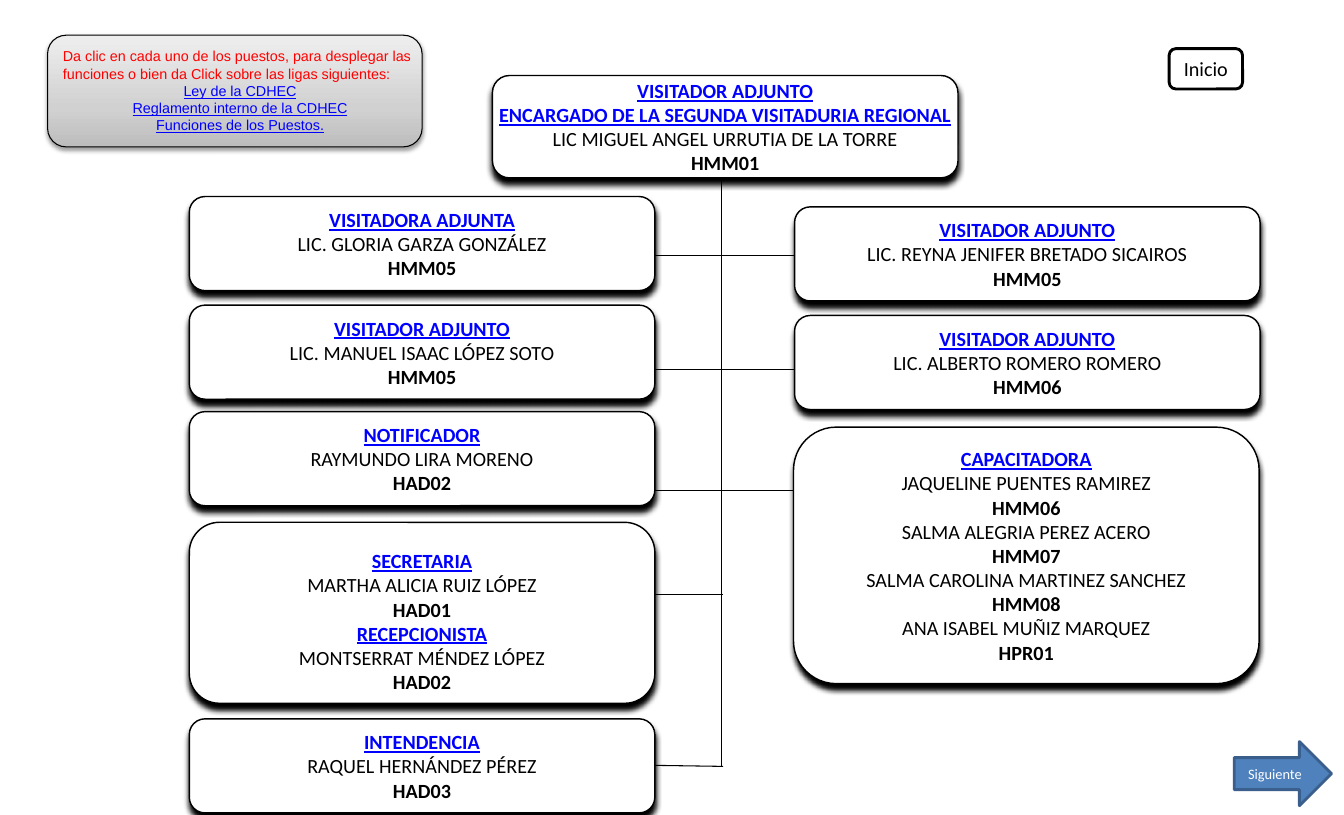
from lxml.etree import SubElement
from pptx import Presentation
from pptx.dml.color import RGBColor
from pptx.enum.shapes import MSO_CONNECTOR as CONNECTOR, MSO_SHAPE as SHAPE
from pptx.enum.text import MSO_ANCHOR as ANCHOR, PP_ALIGN as ALIGN
from pptx.oxml.ns import qn
from pptx.util import Pt

PX = 9144  # EMU; 100 px to the inch
COLORS = {
    "black": "000000", "white": "FFFFFF", "role": "0000FF", "notice": "FF0000",
    "arrow": "4F81BD", "arrow_edge": "3A5F8C",
    "gray_dark": "BDBDBD", "gray_mid": "D1D1D1", "gray_light": "EEEEEE",
}
STYLES = {
    "role": {"size": Pt(14), "bold": True, "underline": True},
    "person": {"size": Pt(14)},
    "code": {"size": Pt(14), "bold": True},
    "notice": {"size": Pt(10), "name": "Arial"},
    "law": {"size": Pt(10), "name": "Arial", "underline": True},
    "next": {"size": Pt(10)},
}
STYLE_COLORS = {"role": "role", "law": "role", "notice": "notice", "next": "white"}

CARD_W, CARD_H = 450, 91
LEFT_X, RIGHT_X, TRUNK_X = 183, 768, 697
HEAD = ((476, 73, CARD_W, 99), [
    (["VISITADOR ADJUNTO", "ENCARGADO DE LA SEGUNDA VISITADURIA REGIONAL"],
     [("LIC MIGUEL ANGEL URRUTIA DE LA TORRE", "HMM01")])])
SINGLE_POSTS = [
    (LEFT_X, 190, "VISITADORA ADJUNTA", "LIC. GLORIA GARZA GONZÁLEZ", "HMM05"),
    (LEFT_X, 295, "VISITADOR ADJUNTO", "LIC. MANUEL ISAAC LÓPEZ SOTO", "HMM05"),
    (LEFT_X, 398, "NOTIFICADOR", "RAYMUNDO LIRA MORENO", "HAD02"),
    (LEFT_X, 695, "INTENDENCIA", "RAQUEL HERNÁNDEZ PÉREZ", "HAD03"),
    (RIGHT_X, 200, "VISITADOR ADJUNTO", "LIC. REYNA JENIFER BRETADO SICAIROS", "HMM05"),
    (RIGHT_X, 305, "VISITADOR ADJUNTO", "LIC. ALBERTO ROMERO ROMERO", "HMM06"),
]
OFFICE = ((LEFT_X, 505, CARD_W, 175), [
    (["SECRETARIA"], [("MARTHA ALICIA RUIZ LÓPEZ", "HAD01")]),
    (["RECEPCIONISTA"], [("MONTSERRAT MÉNDEZ LÓPEZ", "HAD02")])])
TRAINERS = ((RIGHT_X - 1, 413, CARD_W, 248), [
    (["CAPACITADORA"], [
        ("JAQUELINE PUENTES RAMIREZ", "HMM06"),
        ("SALMA ALEGRIA PEREZ ACERO", "HMM07"),
        ("SALMA CAROLINA MARTINEZ SANCHEZ", "HMM08"),
        ("ANA ISABEL MUÑIZ MARQUEZ", "HPR01")])])
NOTICE = ("Da clic en cada uno de los puestos, para desplegar las funciones "
          "o bien da Click sobre las ligas siguientes:")
LAWS = ["Ley de la CDHEC", "Reglamento interno de la CDHEC", "Funciones de los Puestos."]


def emu(lengths):
    return [length * PX for length in lengths]


def rgb(color):
    return RGBColor.from_string(COLORS[color])


def add_block(slide, kind, box, fill="white", edge="black", weight=1):
    block = slide.shapes.add_shape(kind, *emu(box))
    block.shadow.inherit = False
    block.fill.solid()
    block.fill.fore_color.rgb = rgb(fill)
    block.line.color.rgb = rgb(edge)
    block.line.width = Pt(weight)
    return block


def add_shadow(block, blur, distance, opacity):
    effects = block._element.spPr.find(qn("a:effectLst"))
    outer = SubElement(effects, qn("a:outerShdw"), blurRad=str(Pt(blur)),
                       dist=str(Pt(distance)), dir="5400000", rotWithShape="0")
    color = SubElement(outer, qn("a:srgbClr"), val=COLORS["black"])
    SubElement(color, qn("a:alpha"), val=str(opacity * 1000))


def write(block, lines, wrap=True, anchor=ANCHOR.MIDDLE, margins=(10, 5, 10, 5)):
    """Fill a block with (style, text) lines, one paragraph each."""
    frame = block.text_frame
    frame.word_wrap = wrap
    frame.vertical_anchor = anchor
    for side, margin in zip(("left", "top", "right", "bottom"), emu(margins)):
        setattr(frame, f"margin_{side}", margin)
    for index, (style, text) in enumerate(lines):
        paragraph = frame.add_paragraph() if index else frame.paragraphs[0]
        paragraph.alignment = ALIGN.LEFT if style == "notice" else ALIGN.CENTER
        run = paragraph.add_run()
        run.text = text
        for key, value in {"name": "Calibri", **STYLES[style]}.items():
            setattr(run.font, key, value)
        run.font.color.rgb = rgb(STYLE_COLORS.get(style, "black"))


def add_card(slide, box, posts, drop=0):
    """Place a card of posts, its text lowered by drop px."""
    card = add_block(slide, SHAPE.ROUNDED_RECTANGLE, box)
    add_shadow(card, 4, 4, 100)
    lines = []
    for roles, people in posts:
        lines += [("role", role) for role in roles]
        for person, code in people:
            lines += [("person", person), ("code", code)]
    write(card, lines, wrap=False, margins=(17, 9 + drop, 17, 9 - drop))


def add_line(slide, *ends):
    line = slide.shapes.add_connector(CONNECTOR.STRAIGHT, *emu(ends))
    line.line.color.rgb = rgb("black")
    line.line.width = Pt(0.75)
    SubElement(line._element.spPr, qn("a:effectLst"))


def add_branches(slide):
    add_line(slide, TRUNK_X, 108, TRUNK_X, 742)
    for y in (247, 357, 474):
        add_line(slide, 585, y, 809, y)
    add_line(slide, 585, 575, 699, 575)
    add_line(slide, 633, 740, 699, 741)


def add_notice(slide, box):
    left, top, width, height = box
    panel = add_block(slide, SHAPE.ROUNDED_RECTANGLE, box, weight=0.75)
    add_shadow(panel, 3.1, 1.6, 38)
    panel.fill.gradient()
    panel.fill.gradient_angle = 90
    stops = panel._element.spPr.find(qn("a:gradFill")).find(qn("a:gsLst"))
    for stop in list(stops):
        stops.remove(stop)
    for position, color in ((0, "gray_dark"), (35, "gray_mid"), (100, "gray_light")):
        stop = SubElement(stops, qn("a:gs"), pos=str(position * 1000))
        SubElement(stop, qn("a:srgbClr"), val=COLORS[color])
    message = slide.shapes.add_textbox(*emu((left + 5, top + 7, width, height - 14)))
    write(message, [("notice", NOTICE)] + [("law", law) for law in LAWS],
          anchor=ANCHOR.TOP)


def add_navigation(slide, home_box, next_box):
    home = add_block(slide, SHAPE.ROUNDED_RECTANGLE, home_box, weight=2)
    write(home, [("person", "Inicio")])
    onward = add_block(slide, SHAPE.RIGHT_ARROW, next_box, "arrow", "arrow_edge", 2)
    write(onward, [("next", "Siguiente")])


def main():
    deck = Presentation()
    deck.slide_width, deck.slide_height = emu((1299, 788))
    slide = deck.slides.add_slide(deck.slide_layouts[6])
    add_branches(slide)
    add_card(slide, *HEAD)
    for x, y, role, person, code in SINGLE_POSTS:
        add_card(slide, (x, y, CARD_W, CARD_H), [([role], [(person, code)])])
    add_card(slide, *OFFICE, drop=8)
    add_card(slide, *TRAINERS)
    add_notice(slide, (46, 34, 362, 108))
    add_navigation(slide, (1130, 47, 71, 39), (1193, 717, 94, 62))
    deck.save("out.pptx")


if __name__ == "__main__":
    main()
